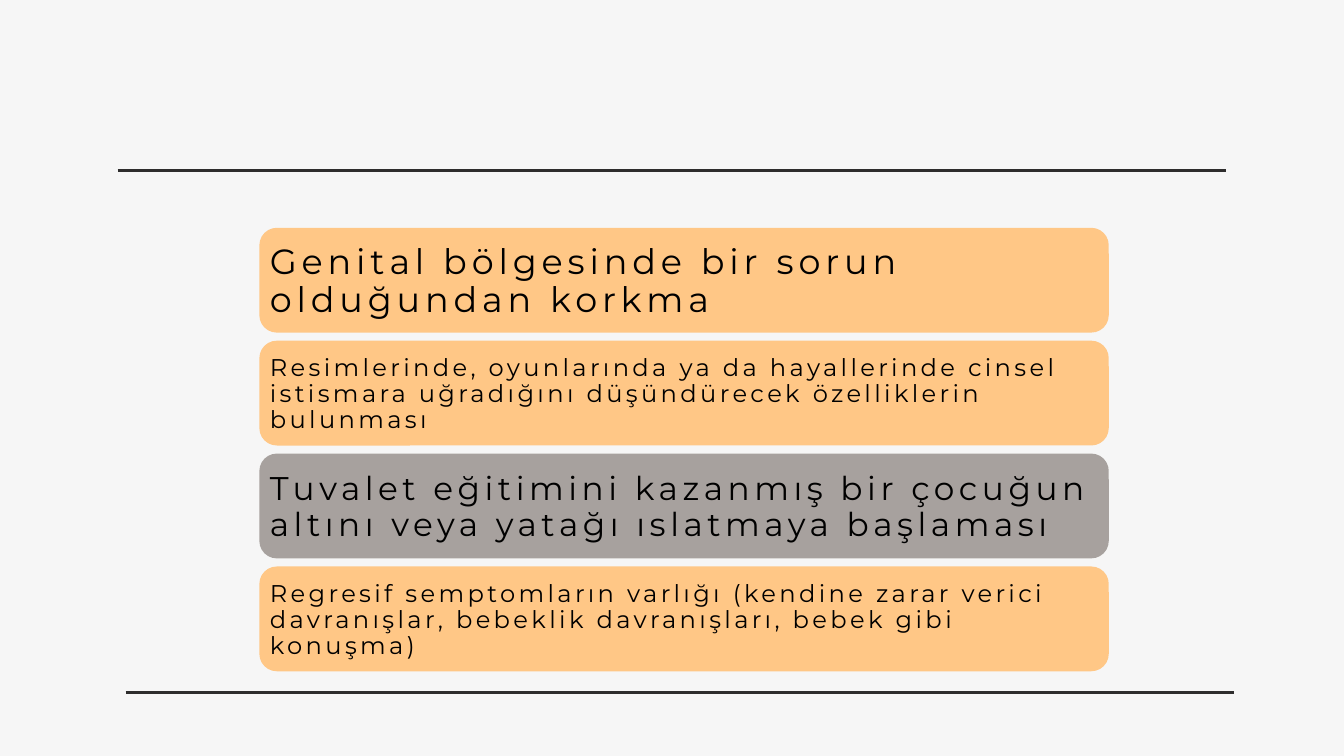
from pptx import Presentation
from pptx.dml.color import RGBColor as RGB
from pptx.enum.shapes import MSO_CONNECTOR as Line, MSO_SHAPE as Shape
from pptx.enum.text import MSO_ANCHOR as Anchor, PP_ALIGN as Align
from pptx.oxml.ns import qn
from pptx.util import Inches, Pt
from lxml import etree

THEME = {
    "font": "Montserrat",
    "back": "F6F6F6",
    "rule": "2E2D2D",
    "text": "000000",
    "warm": "FFC786",
    "gray": "A7A19E",
    # size, line spacing and letter spacing in points
    "large": (37.5, 40.5, 5.2),
    "medium": (35.1, 38, 4.9),
    "small": (25.9, 28, 3.6),
}

CARDS = [
    ("Genital bölgesinde bir sorun olduğundan korkma", "warm", "large"),
    ("Resimlerinde, oyunlarında ya da hayallerinde cinsel istismara "
     "uğradığını düşündürecek özelliklerin bulunması", "warm", "small"),
    ("Tuvalet eğitimini kazanmış bir çocuğun altını veya yatağı "
     "ıslatmaya başlaması", "gray", "medium"),
    ("Regresif semptomların varlığı (kendine zarar verici davranışlar, "
     "bebeklik davranışları, bebek gibi konuşma)", "warm", "small"),
]
RULES = [(1.75, 2.54), (1.87, 10.31)]  # left, middle
RULE_WIDTH = 16.5
LEFT, TOP, WIDTH, HEIGHT, STEP = 3.86, 3.39, 12.64, 1.56, 1.68


def color(name):
    return RGB.from_string(THEME[name])


def add_rule(slide, left, y):
    rule = slide.shapes.add_connector(
        Line.STRAIGHT, Inches(left), Inches(y),
        Inches(left + RULE_WIDTH), Inches(y))
    rule.line.color.rgb = color("rule")
    rule.line.width = Pt(3.2)
    etree.SubElement(rule._element.spPr, qn("a:effectLst"))


def add_card(slide, top, words, fill, style):
    card = slide.shapes.add_shape(
        Shape.ROUNDED_RECTANGLE, Inches(LEFT), Inches(top),
        Inches(WIDTH), Inches(HEIGHT))
    card.shadow.inherit = False
    card.fill.solid()
    card.fill.fore_color.rgb = color(fill)
    card.line.fill.background()

    frame = card.text_frame
    frame.word_wrap = True
    frame.vertical_anchor = Anchor.MIDDLE
    # The rounded shape already insets its text by about 0.08
    frame.margin_left = frame.margin_right = Inches(0.08)
    frame.margin_top, frame.margin_bottom = Inches(0.04), 0

    size, lead, track = THEME[style]
    para = frame.paragraphs[0]
    para.alignment = Align.LEFT
    para.line_spacing = Pt(lead)
    run = para.add_run()
    run.text = words
    run.font.name = THEME["font"]
    run.font.size = Pt(size)
    run.font.color.rgb = color("text")
    run._r.get_or_add_rPr().set("spc", str(round(track * 100)))


def main():
    deck = Presentation()
    deck.slide_width, deck.slide_height = Inches(20), Inches(11.25)
    slide = deck.slides.add_slide(deck.slide_layouts[6])
    slide.background.fill.solid()
    slide.background.fill.fore_color.rgb = color("back")
    for left, y in RULES:
        add_rule(slide, left, y)
    for i, card in enumerate(CARDS):
        add_card(slide, TOP + i * STEP, *card)
    deck.save("out.pptx")


if __name__ == "__main__":
    main()
